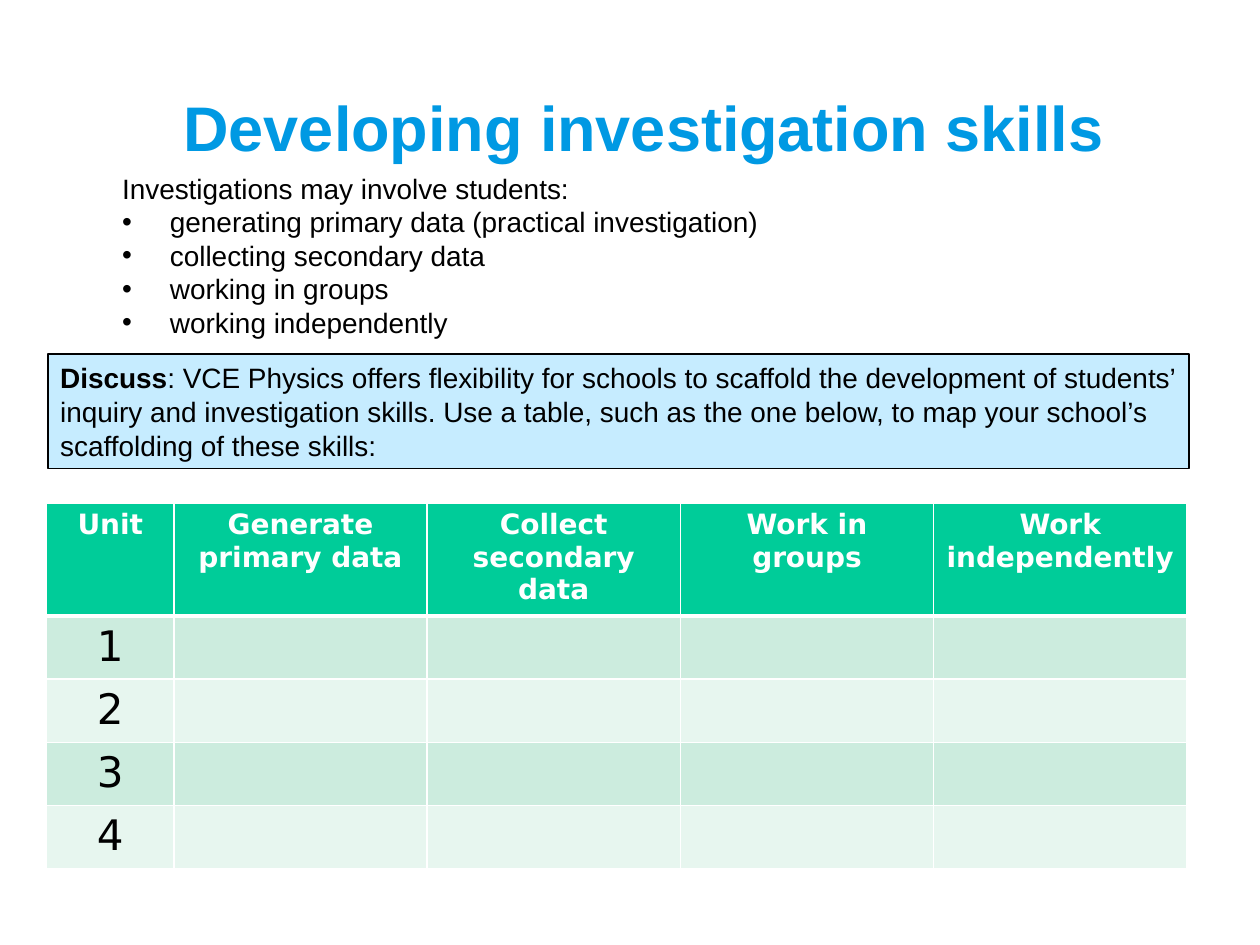
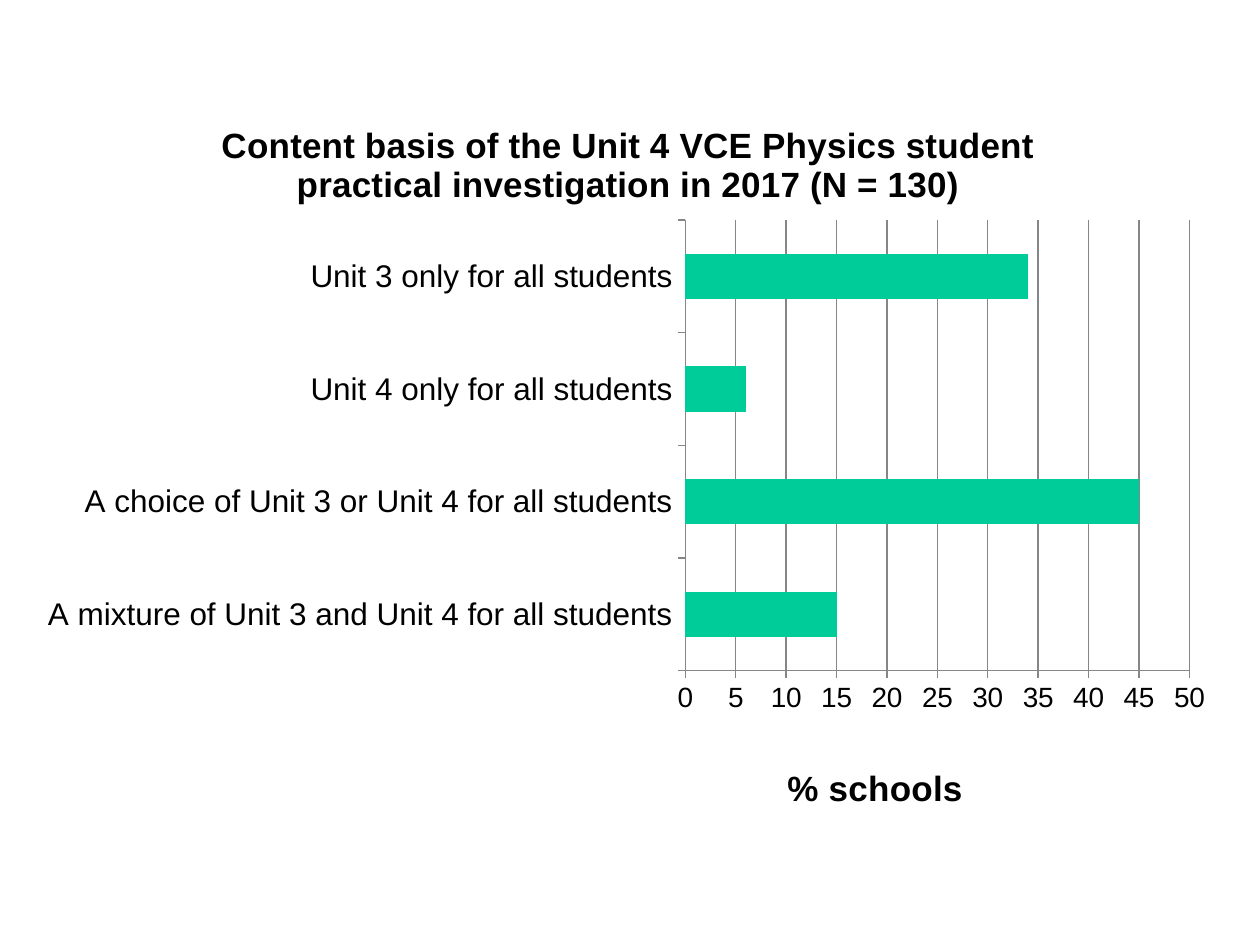
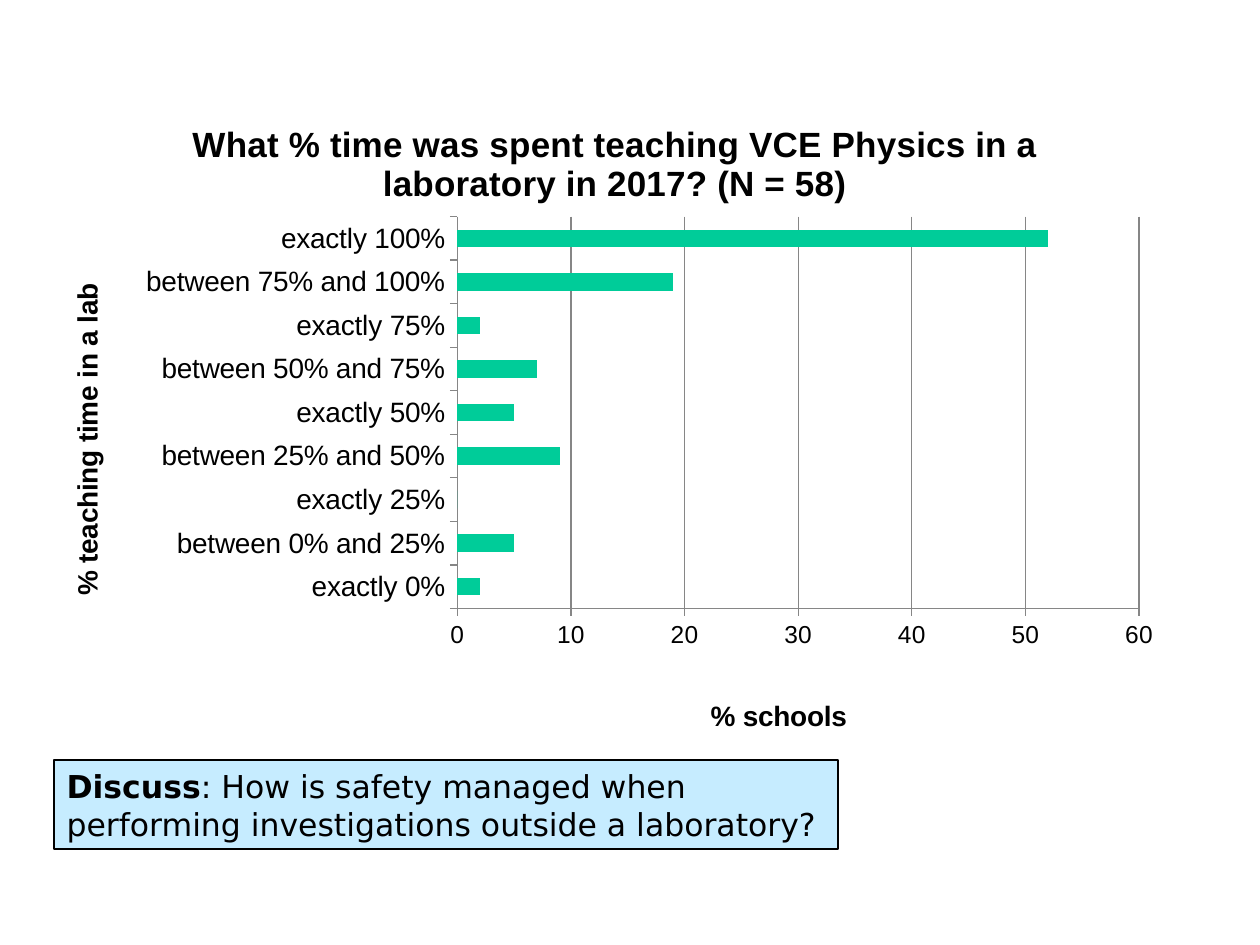
from dataclasses import dataclass

from lxml import etree
from pptx import Presentation
from pptx.chart.data import CategoryChartData
from pptx.dml.color import RGBColor
from pptx.enum.chart import XL_CHART_TYPE, XL_TICK_MARK
from pptx.enum.shapes import MSO_SHAPE
from pptx.enum.text import MSO_ANCHOR, PP_ALIGN
from pptx.oxml.ns import qn
from pptx.util import Inches, Pt

BAR_CLUSTERED = XL_CHART_TYPE.BAR_CLUSTERED
TICK_OUTSIDE = XL_TICK_MARK.OUTSIDE
RECTANGLE = MSO_SHAPE.RECTANGLE
MIDDLE = MSO_ANCHOR.MIDDLE
LEFT, CENTER = PP_ALIGN.LEFT, PP_ALIGN.CENTER


@dataclass(frozen=True)
class Theme:
    title: RGBColor = RGBColor(0x00, 0x99, 0xE3)
    accent: RGBColor = RGBColor(0x00, 0xCC, 0x99)
    bands: tuple = (RGBColor(0xCC, 0xEC, 0xDE), RGBColor(0xE7, 0xF6, 0xEF))
    callout: RGBColor = RGBColor(0xC6, 0xEC, 0xFF)
    grid: RGBColor = RGBColor(0x86, 0x86, 0x86)
    black: RGBColor = RGBColor(0x00, 0x00, 0x00)
    white: RGBColor = RGBColor(0xFF, 0xFF, 0xFF)
    sans: str = "Arial"
    wide: str = "DejaVu Sans"
    title_size: Pt = Pt(36)
    number_size: Pt = Pt(24)
    chart_title_size: Pt = Pt(20)
    body_size: Pt = Pt(16)


theme = Theme()


def style(font, size, color=theme.black, bold=False, name=theme.sans):
    font.size, font.bold, font.name = size, bold, name
    font.color.rgb = color


def add_discussion(slide, place, text, size, name):
    shape = slide.shapes.add_shape(RECTANGLE, *map(Inches, place))
    shape.shadow.inherit = False
    shape.fill.solid()
    shape.fill.fore_color.rgb = theme.callout
    shape.line.color.rgb = theme.black
    shape.line.width = Pt(1)
    paragraph = shape.text_frame.paragraphs[0]
    paragraph.alignment = LEFT
    for words, bold in (("Discuss", True), (": " + text, False)):
        run = paragraph.add_run()
        run.text = words
        style(run.font, size, bold=bold, name=name)


presentation = Presentation()
presentation.slide_width, presentation.slide_height = Inches(10), Inches(7.5)
blank_layout = presentation.slide_layouts[6]

# Slide 1: title
slide = presentation.slides.add_slide(blank_layout)
title = slide.shapes.add_textbox(Inches(0.86), Inches(0.6), Inches(8.5), Inches(0.8))
title.text_frame.word_wrap = True
title.text_frame.vertical_anchor = MIDDLE
paragraph = title.text_frame.paragraphs[0]
paragraph.text = "Developing investigation skills"
paragraph.alignment = CENTER
style(paragraph.runs[0].font, theme.title_size, theme.title, True)

# Slide 1: kinds of investigation
kinds = slide.shapes.add_textbox(Inches(0.87), Inches(1.31), Inches(8.58), Inches(1.45))
kinds.text_frame.word_wrap = True
kinds.text_frame.text = "\n".join([
    "Investigations may involve students:",
    "generating primary data (practical investigation)",
    "collecting secondary data",
    "working in groups",
    "working independently",
])
for index, paragraph in enumerate(kinds.text_frame.paragraphs):
    if index:
        properties = paragraph._p.get_or_add_pPr()
        properties.set("marL", str(Inches(0.38)))
        properties.set("indent", str(-Inches(0.38)))
        etree.SubElement(properties, qn("a:buFont"), typeface=theme.sans)
        etree.SubElement(properties, qn("a:buChar"), char="•")
    style(paragraph.runs[0].font, theme.body_size)

add_discussion(
    slide, (0.38, 2.81, 9.06, 0.91),
    "VCE Physics offers flexibility for schools to scaffold the development of "
    "students’ inquiry and investigation skills. Use a table, such as the one below, "
    "to map your school’s scaffolding of these skills:",
    theme.body_size, theme.sans)

# Slide 1: skills table
headings = ["Unit", "Generate primary data", "Collect secondary data",
            "Work in groups", "Work independently"]
units = ["1", "2", "3", "4"]
table = slide.shapes.add_table(
    len(units) + 1, len(headings),
    Inches(0.37), Inches(3.99), Inches(9.05), Inches(2.79)).table
for index, column in enumerate(table.columns):
    column.width = Inches(2.01 if index else 1.01)
for index, row in enumerate(table.rows):
    row.height = Inches(0.5 if index else 0.79)
    for cell_index, cell in enumerate(row.cells):
        cell_properties = cell._tc.get_or_add_tcPr()
        for side in ("lnL", "lnR", "lnT", "lnB"):
            under_header = (index, side) in ((0, "lnB"), (1, "lnT"))
            border = etree.SubElement(cell_properties, qn("a:" + side),
                                      w=str(Pt(3 if under_header else 1)))
            fill = etree.SubElement(border, qn("a:solidFill"))
            etree.SubElement(fill, qn("a:srgbClr"), val=str(theme.white))
        cell.fill.solid()
        cell.fill.fore_color.rgb = theme.bands[(index - 1) % 2] if index else theme.accent
        paragraph = cell.text_frame.paragraphs[0]
        paragraph.alignment = CENTER
        if index == 0:
            paragraph.text = headings[cell_index]
            style(paragraph.runs[0].font, theme.body_size, theme.white, True, theme.wide)
        elif cell_index == 0:
            paragraph.text = units[index - 1]
            style(paragraph.runs[0].font, theme.number_size, name=theme.wide)

# Slides 2 and 3: survey charts; places are in inches on the slide
charts = [
    dict(
        title="Content basis of the Unit 4 VCE Physics student practical "
              "investigation in 2017 (N = 130)",
        place=(0.2, 0.76, 9.57, 5.75), plot=(5.44, 1.75, 4, 3.59),
        answers={
            "A mixture of Unit 3 and Unit 4 for all students": 15,
            "A choice of Unit 3 or Unit 4 for all students": 45,
            "Unit 4 only for all students": 6,
            "Unit 3 only for all students": 34,
        },
        maximum=50, step=5, category_size=Pt(18), value_size=Pt(16),
        value_title=("% schools", Pt(20), (6.2, 6.05)), category_title=None),
    dict(
        title="What % time was spent teaching VCE Physics in a laboratory in 2017? (N = 58)",
        place=(0.43, 0.76, 8.9, 5.12), plot=(3.63, 1.72, 5.41, 3.11),
        answers={
            "exactly 0%": 2, "between 0% and 25%": 5, "exactly 25%": 0,
            "between 25% and 50%": 9, "exactly 50%": 5, "between 50% and 75%": 7,
            "exactly 75%": 2, "between 75% and 100%": 19, "exactly 100%": 52,
        },
        maximum=60, step=10, category_size=Pt(16), value_size=Pt(14),
        value_title=("% schools", Pt(16), (5.6, 5.5)),
        category_title=("% teaching time in a lab", Pt(16), (0.51, 2.21))),
]
for survey in charts:
    slide = presentation.slides.add_slide(blank_layout)
    data = CategoryChartData()
    data.categories = list(survey["answers"])
    data.add_series("Series 1", list(survey["answers"].values()))
    left, top, width, height = survey["place"]
    chart = slide.shapes.add_chart(
        BAR_CLUSTERED, *map(Inches, survey["place"]), data).chart
    style(chart.font, Pt(10))
    chart.has_legend = False
    chart.has_title = True
    chart.chart_title.include_in_layout = False
    paragraph = chart.chart_title.text_frame.paragraphs[0]
    paragraph.text = survey["title"]
    style(paragraph.runs[0].font, theme.chart_title_size, bold=True)

    # Bars
    plot = chart.plots[0]
    plot.gap_width = 150
    plot.vary_by_categories = False
    bars = plot.series[0].format.fill
    bars.solid()
    bars.fore_color.rgb = theme.accent

    # Axes and their titles
    value_axis, category_axis = chart.value_axis, chart.category_axis
    value_axis.minimum_scale, value_axis.maximum_scale = 0, survey["maximum"]
    value_axis.major_unit = survey["step"]
    value_axis.has_major_gridlines = True
    lines = [value_axis.major_gridlines.format.line]
    layouts = []
    for axis, size, axis_title in (
            (value_axis, survey["value_size"], survey["value_title"]),
            (category_axis, survey["category_size"], survey["category_title"])):
        axis.major_tick_mark = TICK_OUTSIDE
        style(axis.tick_labels.font, size)
        lines.append(axis.format.line)
        axis.has_title = axis_title is not None
        if axis_title:
            words, title_size, position = axis_title
            paragraph = axis.axis_title.text_frame.paragraphs[0]
            paragraph.text = words
            style(paragraph.runs[0].font, title_size, bold=True)
            layouts.append((axis.axis_title._element, position))
    for line in lines:
        line.color.rgb = theme.grid
        line.width = Pt(0.75)

    # Fixed places of the plot area and axis titles
    layouts.append((chart._chartSpace.chart.plotArea, survey["plot"]))
    for element, position in layouts:
        layout = element.find(qn("c:layout"))
        if layout is None:
            layout = etree.Element(qn("c:layout"))
            text = element.find(qn("c:tx"))
            element.insert(0 if text is None else 1, layout)
        manual = etree.SubElement(layout, qn("c:manualLayout"))
        if len(position) == 4:
            etree.SubElement(manual, qn("c:layoutTarget"), val="inner")
        for key in ("xMode", "yMode"):
            etree.SubElement(manual, qn("c:" + key), val="edge")
        fractions = ((position[0] - left) / width, (position[1] - top) / height,
                     *(part / whole for part, whole in zip(position[2:], (width, height))))
        for key, fraction in zip("xywh", fractions):
            etree.SubElement(manual, qn("c:" + key), val=f"{fraction:.4f}")

# Slide 3: safety question
add_discussion(
    slide, (0.43, 6.03, 6.22, 0.71),
    "How is safety managed when performing investigations outside a laboratory?",
    Pt(18), theme.wide)

presentation.save("out.pptx")
